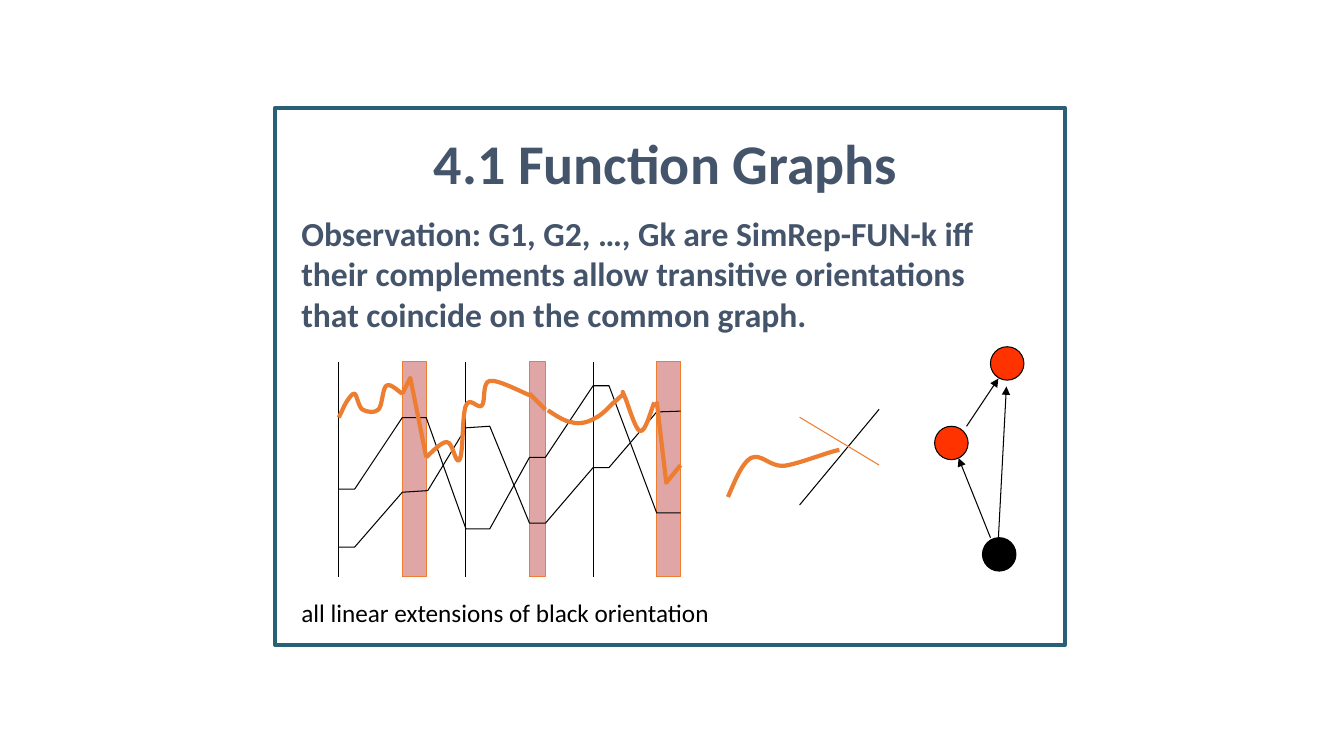
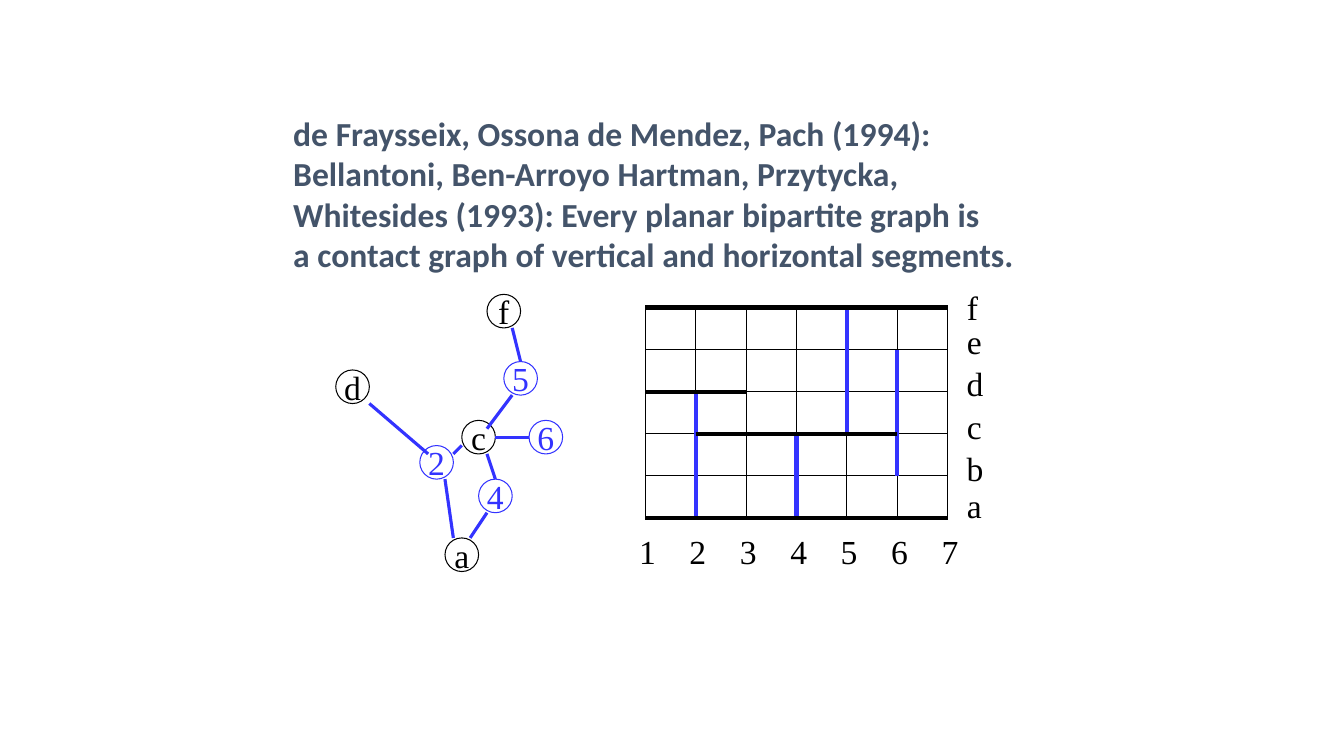
from dataclasses import dataclass

from lxml.etree import SubElement
from pptx import Presentation
from pptx.dml.color import RGBColor
from pptx.enum.shapes import MSO_CONNECTOR, MSO_SHAPE
from pptx.enum.text import MSO_ANCHOR, MSO_AUTO_SIZE, PP_ALIGN
from pptx.oxml.ns import qn
from pptx.util import Inches, Pt


@dataclass(frozen=True)
class Theme:
    white: str = "FFFFFF"
    black: str = "000000"
    frame: str = "2A6076"
    heading: str = "44546A"
    orange: str = "ED7D31"
    band: str = "DFA6A5"
    red: str = "FF3300"
    blue: str = "3333FF"
    sans: str = "Calibri"
    serif: str = "Times New Roman"
    title_size: int = 40
    body_size: int = 24
    caption_size: int = 18
    thin: float = 0.75
    medium: float = 2.25
    thick: float = 3


THEME = Theme()


@dataclass(frozen=True)
class Box:
    left: float
    top: float
    width: float
    height: float
    columns: int = 1
    rows: int = 1

    def point(self, column, row):
        return (
            Inches(self.left + self.width * column / self.columns),
            Inches(self.top + self.height * row / self.rows),
        )

    def cell(self, column, row, across, down):
        pitch_x, pitch_y = self.width / self.columns, self.height / self.rows
        return Box(self.left + column * pitch_x, self.top + row * pitch_y,
                   across * pitch_x, down * pitch_y)

    def area(self):
        return tuple(map(Inches, (self.left, self.top, self.width, self.height)))


def color(code):
    return RGBColor.from_string(code)


def draw_outline(shape, code, weight):
    shape.line.color.rgb = color(code)
    shape.line.width = Pt(weight)


def add_span(para, text, font, size, code, bold=False):
    span = para.add_run()
    span.text = text
    span.font.name = font
    span.font.size = Pt(size)
    span.font.bold = bold
    span.font.color.rgb = color(code)


def add_heading(para, text, size=THEME.body_size, align=PP_ALIGN.LEFT):
    para.alignment = align
    add_span(para, text, THEME.sans, size, THEME.heading, True)


def add_label(page, box, text, font=THEME.serif, size=THEME.body_size):
    label = page.shapes.add_textbox(*box.area()).text_frame
    label.word_wrap = False
    label.auto_size = MSO_AUTO_SIZE.SHAPE_TO_FIT_TEXT
    add_span(label.paragraphs[0], text, font, size, THEME.black)


def add_figure(page, kind, box, fill, line=None, weight=THEME.thin):
    shape = page.shapes.add_shape(kind, *box.area())
    shape.shadow.inherit = False
    shape.fill.solid()
    shape.fill.fore_color.rgb = color(fill)
    if line:
        draw_outline(shape, line, weight)
    else:
        shape.line.fill.background()
    return shape


def add_line(page, box, start, end, code=THEME.black, weight=THEME.thin, arrow=False):
    line = page.shapes.add_connector(
        MSO_CONNECTOR.STRAIGHT, *box.point(*start), *box.point(*end))
    draw_outline(line, code, weight)
    properties = line.element.spPr
    if arrow:
        SubElement(properties.find(qn("a:ln")), qn("a:tailEnd"), type="triangle")
    SubElement(properties, qn("a:effectLst"))


def add_trace(page, box, points, code=THEME.black, weight=THEME.thin, curved=False):
    first, *rest = (box.point(*point) for point in points)
    builder = page.shapes.build_freeform(*first)
    builder.add_line_segments(rest, close=False)
    trace = builder.convert_to_shape()
    trace.shadow.inherit = False
    trace.fill.background()
    draw_outline(trace, code, weight)
    if curved:
        bend_segments(trace)


def bend_segments(trace):
    segments = list(trace.element.iter(qn("a:lnTo")))
    for curve, *others in zip(segments[::3], segments[1::3], segments[2::3]):
        curve.tag = qn("a:cubicBezTo")
        for segment in others:
            curve.append(segment[0])
            segment.getparent().remove(segment)


def add_function_plot(page, box):
    for column in range(0, 41, 8):
        add_line(page, box, (column, 0), (column, box.rows))
    for column, across in ((8, 3), (24, 2), (40, 3)):
        add_figure(page, MSO_SHAPE.RECTANGLE, box.cell(column, 0, across, box.rows),
                   THEME.band, THEME.orange)

    black_functions = (
        [(0, 16), (2, 16), (8, 7), (11, 7), (16, 21), (19, 21),
         (24, 12), (26, 12), (32, 3), (34, 3), (40, 19), (43, 19)],
        [(0, 23.3), (2, 23.3), (8, 16.4), (11.2, 16.2), (16, 8.3), (19, 8.1),
         (24, 20.3), (26, 20.3), (32, 13.3), (34, 13.3), (40, 6.3), (43, 6.2)],
    )
    for points in black_functions:
        add_trace(page, box, points)

    straight_parts = (
        [(8, 4), (9, 2), (11, 12)],
        [(40, 5), (41.2, 15.2), (43, 13)],
    )
    for points in straight_parts:
        add_trace(page, box, points, THEME.orange, THEME.thick)
    add_line(page, box, (24, 4), (26, 6), THEME.orange, THEME.thick)

    curved_parts = (
        [(0, 7), (0.4, 6.3), (0.6, 5.6), (1, 5), (1.3, 4.6), (1.7, 3.9), (2, 4),
         (2.3, 4.2), (2.5, 5.7), (3, 6), (3.5, 6.3), (4.5, 6.5), (5, 6),
         (5.5, 5.5), (5.5, 3.3), (6, 3), (6.5, 2.6), (7.6, 3.8), (8, 4)],
        [(11, 12), (11.4, 11.7), (12.9, 10), (13.6, 10.1),
         (14.4, 10.1), (14.7, 13.1), (15.2, 12.3), (15.7, 11.4), (15.5, 6.6), (16, 5.5),
         (16.5, 4.3), (17.5, 6), (18, 5.5), (18.5, 5), (18, 2.6), (19, 2.4),
         (20, 2.2), (23, 3.8), (24, 4.2)],
        [(26.3, 6.1), (26.8, 6.4), (28.3, 7.5), (29.3, 7.6),
         (30.2, 7.9), (31.4, 7.6), (32.2, 7.1), (33.1, 6.7), (34, 5.7), (34.5, 5.2),
         (35.2, 4.7), (35.4, 4.3), (35.7, 4.2), (35.9, 3.9), (35.5, 3.4), (35.9, 4.2),
         (36.3, 5), (37.3, 8.6), (37.9, 8.7), (38.6, 8.9), (39.3, 6), (39.7, 5.1)],
    )
    for points in curved_parts:
        add_trace(page, box, points, THEME.orange, THEME.thick, curved=True)


def add_crossing(page, box):
    curve = [(0, 11), (0.9, 8.9), (1.8, 6.7), (2.9, 6.1),
             (4.2, 5.5), (5.2, 7.2), (7, 7.1), (8.8, 6.9), (12.7, 5.3), (14, 5.1)]
    add_trace(page, box, curve, THEME.orange, THEME.thick, curved=True)
    add_line(page, box, (9, 12), (19, 0))
    add_line(page, box, (9, 1), (19, 7), THEME.orange)


def add_orientation(page, box):
    for column, row, fill in ((0, 10, THEME.red), (7, 0, THEME.red), (6, 24, THEME.black)):
        add_figure(page, MSO_SHAPE.OVAL, box.cell(column, row, 4.2, 4.2),
                   fill, THEME.black)
    for start, end in (((4, 10), (8, 4)), ((7, 24), (3, 14)), ((8, 24), (9, 5))):
        add_line(page, box, start, end, arrow=True)


def add_contact_graph(page, box):
    nodes = (
        ("d", 0, 9), ("c", 15, 15), ("f", 18, 0), ("a", 13, 29),
        ("2", 10, 18), ("5", 20, 8), ("6", 23, 15), ("4", 17, 22),
    )
    edges = (
        ((4, 13), (11, 19)), ((13, 22), (14, 29)), ((14, 19), (15, 18)),
        ((16, 29), (18, 26)), ((18, 19), (19, 22)), ((19, 17), (23, 17)),
        ((18, 16), (21, 12)), ((21, 4), (22, 8)),
    )
    for name, column, row in nodes:
        code = THEME.blue if name.isdigit() else THEME.black
        node = add_figure(page, MSO_SHAPE.OVAL, box.cell(column, row, 4, 4),
                          THEME.white, code)
        frame = node.text_frame
        frame.word_wrap = False
        frame.vertical_anchor = MSO_ANCHOR.MIDDLE
        para = frame.paragraphs[0]
        para.alignment = PP_ALIGN.CENTER
        add_span(para, name, THEME.serif, THEME.body_size, code)
    for start, end in edges:
        add_line(page, box, start, end, THEME.blue, THEME.medium)


def add_segment_grid(page, box):
    for row in range(box.rows + 1):
        add_line(page, box, (0, row), (box.columns, row))
    for column in range(box.columns + 1):
        add_line(page, box, (column, 0), (column, box.rows))

    row_labels = (("f", 0.31, 0.08), ("e", 0.35, 0), ("d", 0.37, 0),
                  ("c", 0.35, 0), ("b", 0.37, 0), ("a", 0.35, -0.05))
    right, bottom = box.left + box.width, box.top + box.height
    for row, (name, width, nudge) in enumerate(row_labels):
        top = box.top + row * box.height / box.rows - 0.33 + nudge
        add_label(page, Box(right + 0.09, top, width, 0.5), name)
    for column in range(box.columns + 1):
        left = box.left + column * box.width / box.columns - 0.16
        add_label(page, Box(left, bottom + 0.08, 0.37, 0.5), str(column + 1))

    horizontal = ((3, 1, 5), (5, 0, 6), (2, 0, 2), (0, 0, 6))
    vertical = ((1, 5, 2), (3, 5, 3), (4, 3, 0), (5, 4, 1))
    for column, start, end in vertical:
        add_line(page, box, (column, start), (column, end), THEME.blue, THEME.thick)
    for row, start, end in horizontal:
        add_line(page, box, (start, row), (end, row), THEME.black, THEME.thick)


def build_function_page(page, box):
    add_figure(page, MSO_SHAPE.RECTANGLE, box, THEME.white, THEME.frame, THEME.thick)
    left, top = box.left, box.top
    text = page.shapes.add_textbox(
        *Box(left + 0.16, top + 0.16, 7.42, 2.19).area()).text_frame
    text.word_wrap = True
    add_heading(text.paragraphs[0], "4.1 Function Graphs",
                THEME.title_size, PP_ALIGN.CENTER)
    para = text.add_paragraph()
    para.space_before = Pt(THEME.body_size / 2)
    add_heading(para, "Observation: G1, G2, …, Gk are SimRep-FUN-k iff their "
                      "complements allow transitive orientations that coincide "
                      "on the common graph.")
    add_function_plot(page, Box(left + 0.63, top + 2.52, 3.39, 2.13, 43, 27))
    add_label(page, Box(left + 0.16, top + 4.81, 4.29, 0.4),
              "all linear extensions of black orientation",
              THEME.sans, THEME.caption_size)
    add_crossing(page, Box(left + 4.49, top + 2.99, 1.5, 0.95, 19, 12))
    add_orientation(page, Box(left + 6.54, top + 2.37, 0.87, 2.21, 11, 28))


def build_contact_page(page, box):
    panel = add_figure(page, MSO_SHAPE.RECTANGLE, box, THEME.white)
    text = panel.text_frame
    text.word_wrap = False
    text.vertical_anchor = MSO_ANCHOR.TOP
    lines = (
        "de Fraysseix, Ossona de Mendez, Pach (1994):",
        "Bellantoni, Ben-Arroyo Hartman, Przytycka,",
        "Whitesides (1993): Every planar bipartite graph is",
        "a contact graph of vertical and horizontal segments.",
    )
    for index, line in enumerate(lines):
        add_heading(text.add_paragraph() if index else text.paragraphs[0], line)
    add_contact_graph(page, Box(box.left + 0.52, box.top + 1.85, 2.25, 2.75, 27, 33))
    add_segment_grid(page, Box(box.left + 3.59, box.top + 1.98, 3, 2.09, 6, 5))


def main():
    deck = Presentation()
    deck.slide_width, deck.slide_height = Inches(13.33), Inches(7.5)
    pages = (
        (build_function_page, Box(2.73, 1.07, 7.83, 5.33)),
        (build_contact_page, Box(2.81, 1.07, 7.72, 5.28)),
    )
    for build, box in pages:
        build(deck.slides.add_slide(deck.slide_layouts[6]), box)
    deck.save("out.pptx")


if __name__ == "__main__":
    main()
